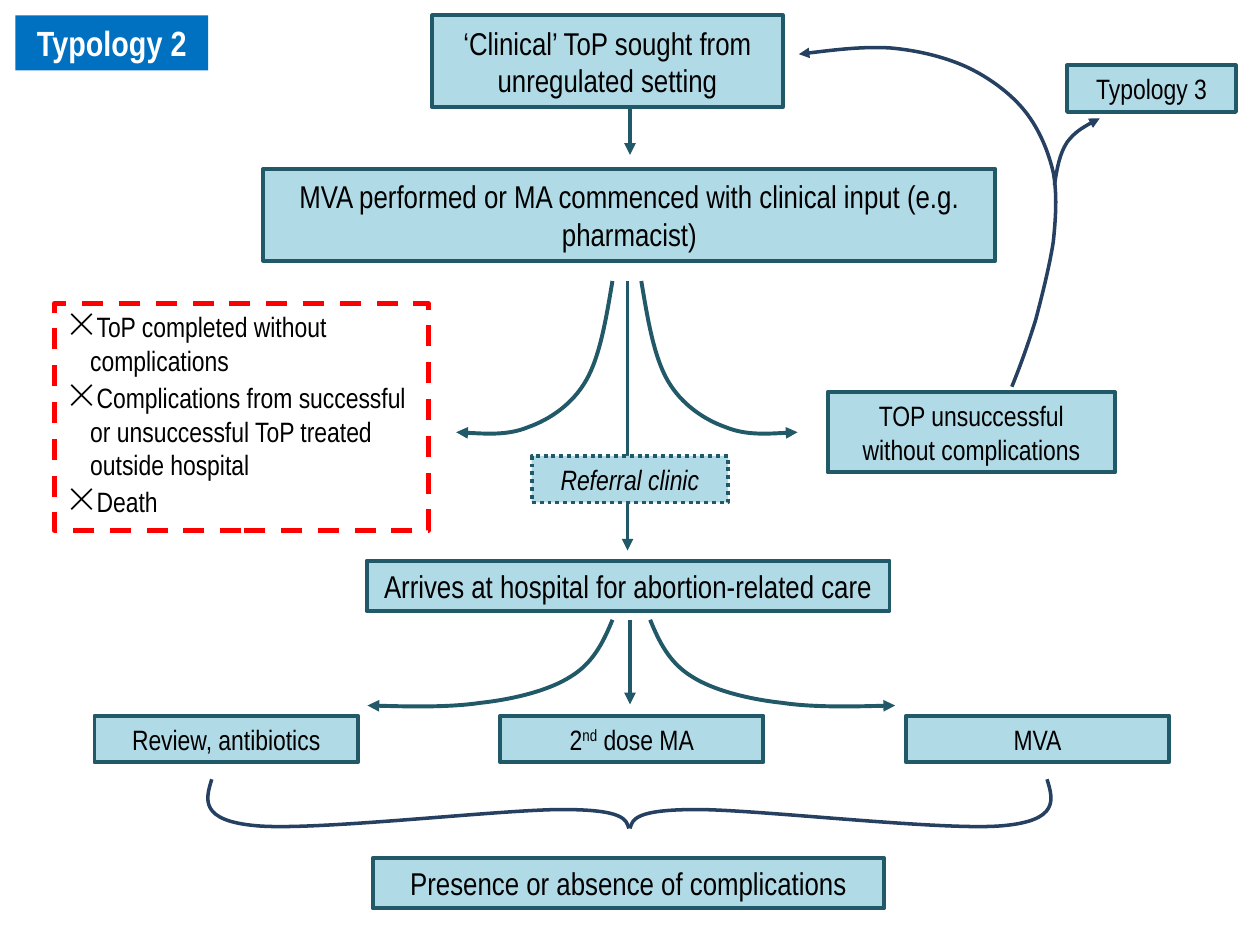
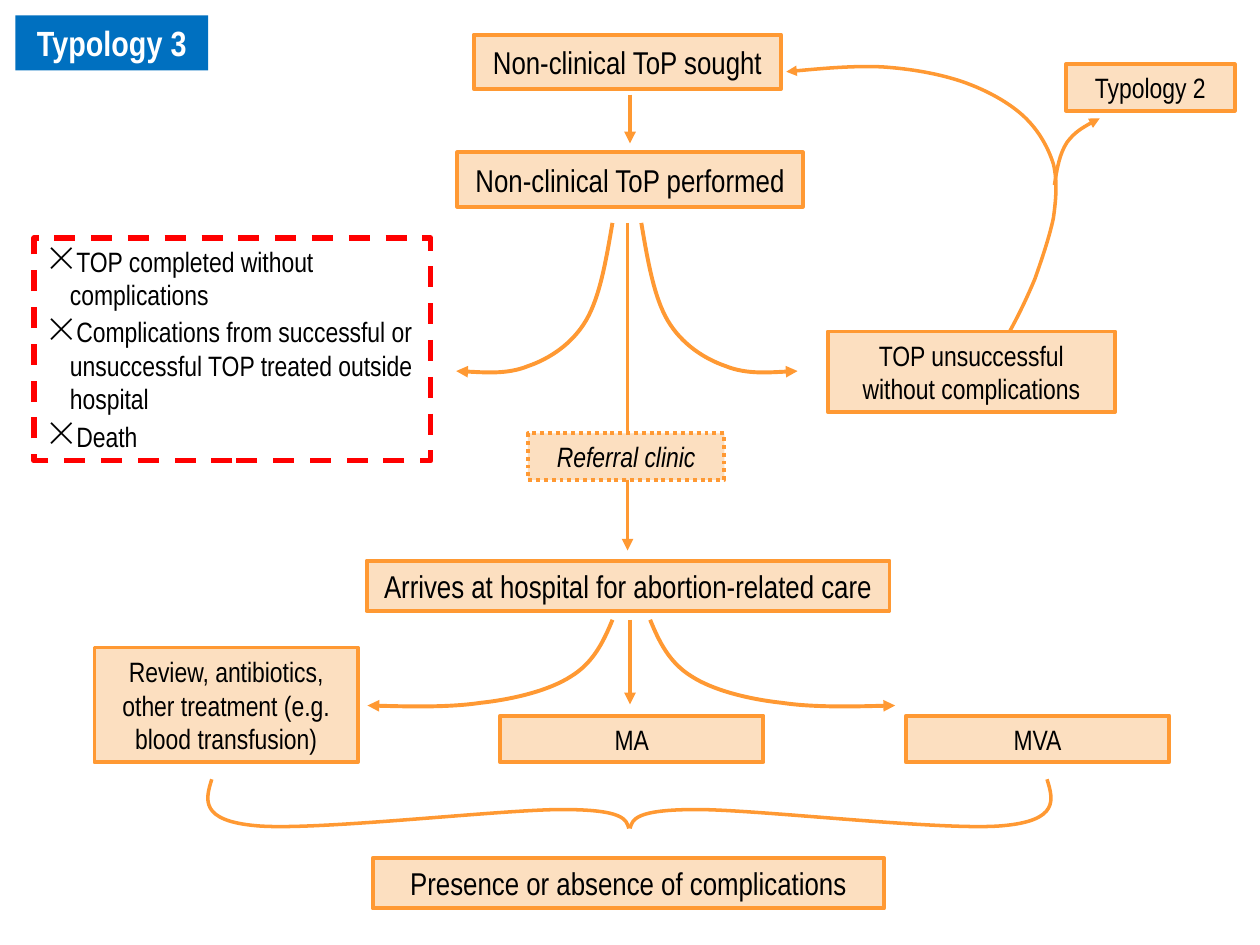
import pptx
import pptx.dml.color
import pptx.enum.dml
import pptx.enum.shapes
import pptx.enum.text
import pptx.oxml.ns
import pptx.oxml.xmlchemy
import pptx.util
from lxml import etree

Pt = pptx.util.Pt
qn = pptx.oxml.ns.qn
FONT = "Arial Narrow"
COLORS = {"text": "000000", "title": "0070C0", "white": "FFFFFF", "outcome": "FF0000"}
DASH = pptx.enum.dml.MSO_LINE

# Curves: points relative to their start, each three after the first a Bezier segment
OUTCOME_BRANCH = [(0, 0), (3.6, 21.6), (7.2, 43.2), (15.1, 56.9),
                  (23, 70.6), (36, 79.2), (48.2, 83.5),
                  (60.5, 88.6), (89.3, 86.4), (89.3, 86.4)]
CARE_BRANCH = [(0, 0), (5, 12.2), (10.8, 24.5), (23.8, 32.4),
               (36, 40.3), (56.2, 45.4), (75.6, 47.5),
               (95, 50.4), (140, 49), (140, 49)]
BRACE_HALF = [(0, 0), (-3.6, 11.5), (-7.2, 23.8), (25.9, 26.6),
              (59.8, 29.5), (164.9, 17.3), (200.2, 17.3),
              (235.4, 17.3), (236.9, 23), (238.3, 28.1)]
RETURN_LOOP = [(0, 0), (18, -2.2), (36, -4.4), (51.8, -3.6),
               (67.7, -2.2), (82.8, 1.4), (95.7, 7.2),
               (109.4, 13.6), (121.7, 23), (129.6, 33.1),
               (137.5, 43.2), (142.5, 55.4), (145.4, 67.6),
               (147.6, 79.9), (146.9, 92.8), (145.4, 107.2),
               (143.3, 120.9), (138.9, 138.2), (135.3, 151.9),
               (131, 165.6), (126.7, 177.8), (121.7, 190)]
SIDE_EXIT = [(0, 0), (1.4, -9.4), (2.9, -18), (7.2, -24.5),
             (11.5, -30.2), (18.7, -34.6), (25.9, -38.2)]

SLIDES = [
    {
        "title": "Typology 2",
        "colors": {"fill": "B0DAE6", "line": "215968", "loop": "254061"},
        "boxes": [
            ("‘Clinical’ ToP sought from unregulated setting", (247, 8.8, 200.2, 52.6), 18),
            ("MVA performed or MA commenced with clinical input (e.g. pharmacist)",
             (150.5, 96.5, 418.3, 52.6), 18),
            ("TOP unsuccessful without complications", (473, 224, 164.2, 46), 16),
            ("Typology 3", (609.8, 37.4, 96.5, 26.6), 16),
            ("Review, antibiotics", (54, 409, 150.5, 26.6), 16),
            ("2^nd^ dose MA", (285.8, 409, 150.5, 26.6), 16),
        ],
        "outcomes": ["ToP completed without complications",
                     "Complications from successful or unsuccessful ToP treated outside hospital",
                     "Death"],
        "outcome_at": (31, 173.5, 213.8, 129.6),
        "clinic_at": (303.8, 260.6, 112.3, 26.6),
        "first_arrow": 60.5, "branch_top": 160.6, "branch_scale": 1,
        "loop_start": (456.5, 31), "loop_scale": (1, 1),
    },
    {
        "title": "Typology 3",
        "colors": {"fill": "FCDFC0", "line": "FF9933", "loop": "FF9933"},
        "boxes": [
            ("Non-clinical ToP sought", (270.7, 19.8, 175.7, 31), 18),
            ("Non-clinical ToP performed", (261.4, 87.1, 197.3, 31), 18),
            ("TOP unsuccessful without complications", (473, 189.4, 164.2, 46), 16),
            ("Typology 2", (609.1, 36.7, 96.5, 26.6), 16),
            ("Review, antibiotics, other treatment (e.g. blood transfusion)",
             (54, 370, 150.5, 65.5), 16),
            ("MA", (285.8, 409, 150.5, 26.6), 16),
        ],
        "outcomes": ["TOP completed without complications",
                     "Complications from successful or unsuccessful TOP treated outside hospital",
                     "Death"],
        "outcome_at": (19.4, 136, 226.8, 127.4),
        "clinic_at": (301.7, 247.7, 112.3, 26.6),
        "first_arrow": 54, "branch_top": 127.4, "branch_scale": 0.98,
        "loop_start": (449.3, 41), "loop_scale": (1.05, 0.78),
    },
]
SHARED_BOXES = [
    ("MVA", (517.7, 409, 150.5, 26.6), 16),
    ("Arrives at hospital for abortion-related care", (209.5, 320.4, 298.8, 28.8), 18),
    ("Presence or absence of complications", (213, 490.3, 292.3, 28.8), 18),
]


class Flowchart:
    def __init__(self, prs):
        self.prs = prs

    def new_slide(self, colors):
        self.s = self.prs.slides.add_slide(self.prs.slide_layouts[6])
        self.colors = {**COLORS, **colors}

    def rgb(self, name):
        return pptx.dml.color.RGBColor.from_string(self.colors[name])

    def stroke(self, sp, color, width, dash=None):
        sp.line.color.rgb = self.rgb(color)
        sp.line.width = Pt(width)
        if dash:
            sp.line.dash_style = dash

    def arrow_end(self, sp, end):
        etree.SubElement(sp.line._get_or_add_ln(), qn(f"a:{end}End"), type="triangle")

    def rect(self, at, fill, line=None, width=2.25, dash=None):
        sp = self.s.shapes.add_shape(pptx.enum.shapes.MSO_SHAPE.RECTANGLE, *map(Pt, at))
        sp.shadow.inherit = False
        if fill:
            sp.fill.solid()
            sp.fill.fore_color.rgb = self.rgb(fill)
        else:
            sp.fill.background()
        if line:
            self.stroke(sp, line, width, dash)
        else:
            sp.line.fill.background()
        tf = sp.text_frame
        tf.word_wrap = True
        tf.auto_size = pptx.enum.text.MSO_AUTO_SIZE.SHAPE_TO_FIT_TEXT
        return sp

    def format_run(self, r, size, color="text", bold=False, italic=False):
        r.font.name = FONT
        r.font.size = Pt(size)
        r.font.bold = bold
        r.font.italic = italic
        r.font.color.rgb = self.rgb(color)

    def box(self, text, at, size, fill="fill", line="line", dash=None, **style):
        """Centred box; text between ^ marks is superscript."""
        tf = self.rect(at, fill, line, dash=dash).text_frame
        tf.vertical_anchor = pptx.enum.text.MSO_ANCHOR.MIDDLE
        p = tf.paragraphs[0]
        p.alignment = pptx.enum.text.PP_ALIGN.CENTER
        for i, part in enumerate(text.split("^")):
            r = p.add_run()
            r.text = part
            self.format_run(r, size, **style)
            if i % 2:
                r.font._element.set("baseline", "30000")

    def bullet_box(self, items, at):
        tf = self.rect(at, None, "outcome", 3, DASH.DASH).text_frame
        tf.vertical_anchor = pptx.enum.text.MSO_ANCHOR.TOP
        tf.text = "\n".join(items)
        for p in tf.paragraphs:
            p.alignment = pptx.enum.text.PP_ALIGN.LEFT
            p.space_before = Pt(2)
            pPr = p._p.get_or_add_pPr()
            pPr.set("marL", str(Pt(13.5)))
            pPr.set("indent", str(-Pt(13.5)))
            etree.SubElement(pPr, qn("a:buSzPct"), val="135000")
            etree.SubElement(pPr, qn("a:buChar"), char="×")
            self.format_run(p.runs[0], 16)

    def arrow(self, x, top, bottom):
        sp = self.s.shapes.add_connector(pptx.enum.shapes.MSO_CONNECTOR.STRAIGHT,
                                         Pt(x), Pt(top), Pt(x), Pt(bottom))
        self.stroke(sp, "line", 2.25)
        self.arrow_end(sp, "tail")
        etree.SubElement(sp._element.spPr, qn("a:effectLst"))

    def curve(self, points, start, scale=(1, 1), color="line", width=2.25, end=None):
        pts = [(Pt(start[0] + x * scale[0]), Pt(start[1] + y * scale[1])) for x, y in points]
        fb = self.s.shapes.build_freeform(*pts[0])
        fb.add_line_segments(pts[1:], close=False)
        sp = fb.convert_to_shape()
        # Turn each three line segments into one Bezier segment
        steps = list(sp._element.iter(qn("a:lnTo")))
        for i in range(0, len(steps), 3):
            bezier = etree.Element(qn("a:cubicBezTo"))
            steps[i].addprevious(bezier)
            for step in steps[i:i + 3]:
                bezier.append(step[0])
                step.getparent().remove(step)
        sp.shadow.inherit = False
        sp.fill.background()
        self.stroke(sp, color, width)
        if end:
            self.arrow_end(sp, end)


def build_slide(chart, data):
    chart.new_slide(data["colors"])

    # Title band and steps
    chart.box(data["title"], (8.8, 8.8, 110.2, 31.5), 20, "title", None,
              color="white", bold=True)
    for text, at, size in data["boxes"] + SHARED_BOXES:
        chart.box(text, at, size)
    chart.bullet_box(data["outcomes"], data["outcome_at"])

    # Straight arrows, with the referral clinic on the main one
    top = data["branch_top"]
    chart.arrow(360, data["first_arrow"], data["first_arrow"] + 28)
    chart.arrow(358.6, top, 314.6)
    chart.arrow(360, 354.2, 402.5)
    chart.box("Referral clinic", data["clinic_at"], 16, dash=DASH.ROUND_DOT, italic=True)

    # Mirrored pairs: branches and brace
    for side, outcome_x, care_x, brace_x in ((-1, 350, 350, 598.3), (1, 366.5, 371.5, 121)):
        chart.curve(OUTCOME_BRANCH, (outcome_x, top), (side, data["branch_scale"]), end="tail")
        chart.curve(CARE_BRANCH, (care_x, 354.2), (side, 1), end="tail")
        chart.curve(BRACE_HALF, (brace_x, 445.3), (side, 1), "loop", 2)

    # Way back to the first step, and out to the other typology
    chart.curve(RETURN_LOOP, data["loop_start"], data["loop_scale"], "loop", 2, "head")
    chart.curve(SIDE_EXIT, (602.6, 105.8), color="loop", width=2, end="tail")


def main():
    prs = pptx.Presentation()
    prs.slide_width, prs.slide_height = Pt(720), Pt(540)
    chart = Flowchart(prs)
    for data in SLIDES:
        build_slide(chart, data)
    prs.save("out.pptx")


if __name__ == "__main__":
    main()
